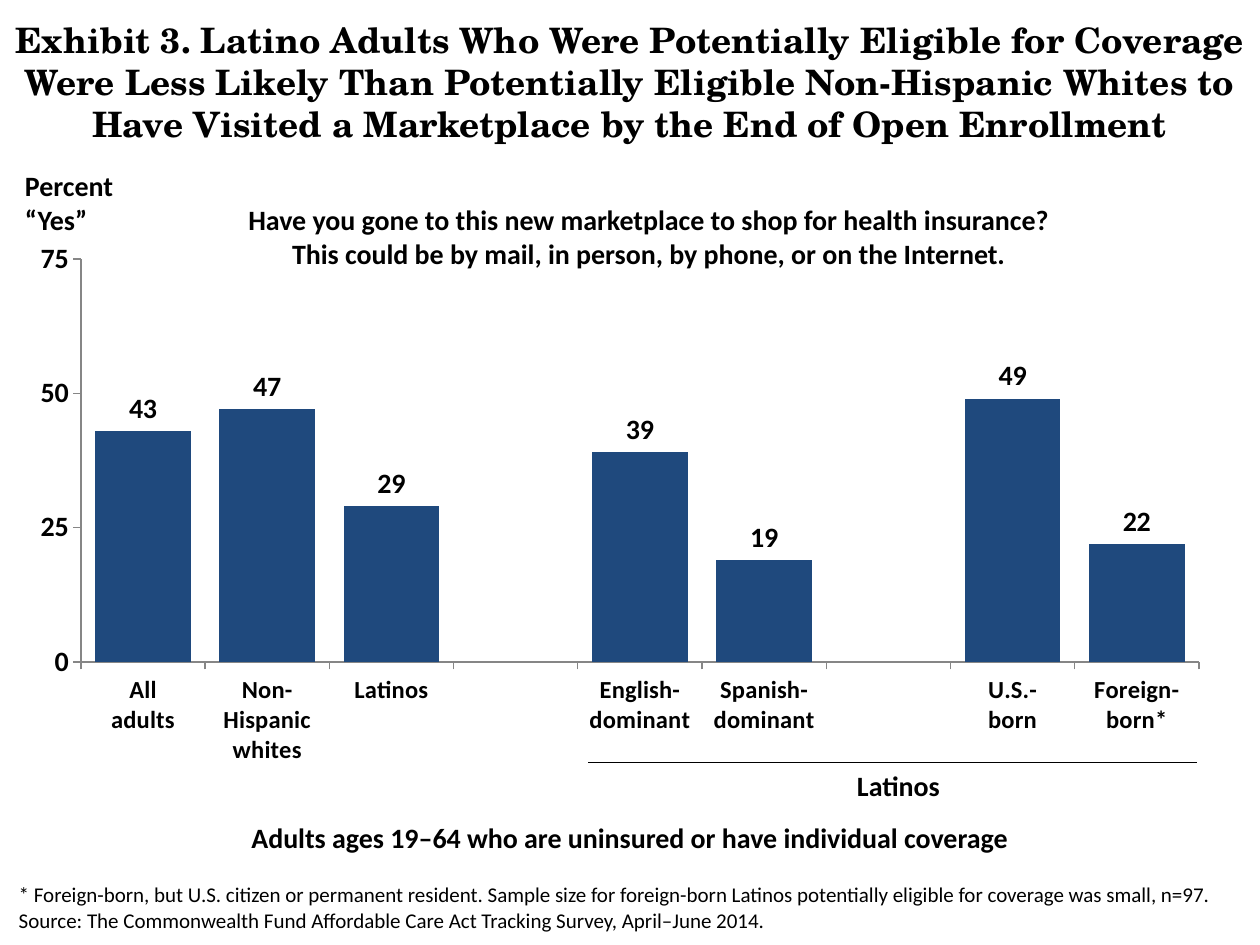
import pptx
import pptx.chart.data
import pptx.dml.color
import pptx.enum.chart
import pptx.enum.shapes
import pptx.enum.text
import pptx.oxml
import pptx.oxml.ns
import pptx.util
from lxml import etree

BLACK = pptx.dml.color.RGBColor(0x00, 0x00, 0x00)
NAVY = pptx.dml.color.RGBColor(0x1F, 0x49, 0x7D)
GRAY = pptx.dml.color.RGBColor(0x86, 0x86, 0x86)
BODY_FONT = "Calibri"
TITLE_FONT = "TeX Gyre Schola"

# The slide is a grid of 100 columns by 100 rows; boxes are (left, top, width, height).
COLUMN = pptx.util.Inches(10) // 100
ROW = pptx.util.Inches(7.5) // 100

RESPONSES = [
    ("All\nadults", 43),
    ("Non-\nHispanic\nwhites", 47),
    ("Latinos", 29),
    ("", None),
    ("English-\ndominant", 39),
    ("Spanish-\ndominant", 19),
    ("", None),
    ("U.S.-\nborn", 49),
    ("Foreign-\nborn*", 22),
]


def on_grid(box):
    left, top, width, height = box
    return [round(n) for n in (left * COLUMN, top * ROW, width * COLUMN, height * ROW)]


def set_font(font, size, bold=True, name=BODY_FONT):
    formats = {"name": name, "size": pptx.util.Pt(size), "bold": bold}
    for attribute, value in formats.items():
        setattr(font, attribute, value)
    font.color.rgb = BLACK


def add_text(slide, box, lines, size=16, bold=True, name=BODY_FONT,
             align=pptx.enum.text.PP_ALIGN.CENTER,
             anchor=pptx.enum.text.MSO_ANCHOR.TOP):
    frame = slide.shapes.add_textbox(*on_grid(box)).text_frame
    frame.word_wrap = True
    frame.vertical_anchor = anchor
    frame.text = "\n".join(lines)
    for paragraph in frame.paragraphs:
        paragraph.alignment = align
        set_font(paragraph.runs[0].font, size, bold, name)


def set_plot_layout(chart, x, y, w, h):
    """Fix the inner plot area, in shares of the chart."""
    plot_area = chart._chartSpace.chart.plotArea
    for old in plot_area.findall(pptx.oxml.ns.qn("c:layout")):
        plot_area.remove(old)
    layout = etree.Element(pptx.oxml.ns.qn("c:layout"))
    manual = etree.SubElement(layout, pptx.oxml.ns.qn("c:manualLayout"))
    settings = {"layoutTarget": "inner", "xMode": "edge", "yMode": "edge",
                "x": x, "y": y, "w": w, "h": h}
    for tag, value in settings.items():
        etree.SubElement(manual, pptx.oxml.ns.qn(f"c:{tag}")).set("val", str(value))
    plot_area.insert(0, layout)


def style_axis(axis, size):
    axis.has_major_gridlines = False
    axis.major_tick_mark = pptx.enum.chart.XL_TICK_MARK.OUTSIDE
    axis.minor_tick_mark = pptx.enum.chart.XL_TICK_MARK.NONE
    axis.format.line.color.rgb = GRAY
    axis.format.line.width = pptx.util.Pt(0.75)
    set_font(axis.tick_labels.font, size)


def add_visits_chart(slide, box):
    visits = pptx.chart.data.CategoryChartData(number_format="0")
    visits.categories = [group for group, _ in RESPONSES]
    visits.add_series("Series 1", [percent for _, percent in RESPONSES])
    chart = slide.shapes.add_chart(
        pptx.enum.chart.XL_CHART_TYPE.COLUMN_CLUSTERED, *on_grid(box), visits).chart
    chart.has_legend = False
    chart.has_title = False
    set_font(chart.font, 16)
    set_plot_layout(chart, 0.05, 0.03, 0.94, 0.74)

    style_axis(chart.category_axis, 14)
    style_axis(chart.value_axis, 16)
    scale = {"minimum_scale": 0, "maximum_scale": 75, "major_unit": 25}
    for attribute, value in scale.items():
        setattr(chart.value_axis, attribute, value)

    plot = chart.plots[0]
    plot.gap_width = 30
    plot.vary_by_categories = False
    bars = plot.series[0].format
    bars.fill.solid()
    bars.fill.fore_color.rgb = NAVY
    plot.has_data_labels = True
    labels = plot.data_labels
    labels.show_value = True
    labels.position = pptx.enum.chart.XL_LABEL_POSITION.OUTSIDE_END
    set_font(labels.font, 16)


def add_group_label(slide, box, label):
    """Rule along the top of the box, with the group's name under it."""
    left, top, width, _ = on_grid(box)
    rule = slide.shapes.add_connector(
        pptx.enum.shapes.MSO_CONNECTOR.STRAIGHT, left, top, left + width, top)
    rule.line.color.rgb = BLACK
    rule.line.width = pptx.util.Pt(0.75)
    etree.SubElement(rule._element.spPr, pptx.oxml.ns.qn("a:effectLst"))
    add_text(slide, (box[0], box[1], box[2] + 0.9, box[3]), [label])


def add_footnotes(slide, box):
    add_text(slide, box, [
        "* Foreign-born, but U.S. citizen or permanent resident. Sample size for "
        "foreign-born Latinos potentially eligible for coverage was small, n=97.",
        "Source: The Commonwealth Fund Affordable Care Act Tracking Survey, "
        "April–June 2014.",
    ], size=12, bold=False, align=pptx.enum.text.PP_ALIGN.LEFT)


def build_exhibit(slide):
    middle = pptx.enum.text.MSO_ANCHOR.MIDDLE
    add_text(slide, (0, 1.33, 100, 14.67), [
        "Exhibit 3. Latino Adults Who Were Potentially Eligible for Coverage "
        "Were Less Likely Than Potentially Eligible Non-Hispanic Whites to "
        "Have Visited a Marketplace by the End of Open Enrollment",
    ], size=20, name=TITLE_FONT, anchor=middle)
    add_visits_chart(slide, (1.7, 25.6, 94.4, 57.73))
    add_text(slide, (1, 18.93, 10.7, 4.93), ["Percent “Yes”"],
             align=pptx.enum.text.PP_ALIGN.LEFT, anchor=middle)
    add_text(slide, (6.9, 20.8, 89.2, 8.53), [
        "Have you gone to this new marketplace to shop for health insurance?",
        "This could be by mail, in person, by phone, or on the Internet.",
    ])
    add_group_label(slide, (46.7, 80.67, 48.3, 4.93), "Latinos")
    add_text(slide, (0.5, 86.13, 99, 4.93),
             ["Adults ages 19–64 who are uninsured or have individual coverage"])
    add_footnotes(slide, (0.5, 92.67, 99.2, 6.67))


def main():
    deck = pptx.Presentation()
    deck.slide_width = 100 * COLUMN
    deck.slide_height = 100 * ROW
    build_exhibit(deck.slides.add_slide(deck.slide_layouts[6]))
    deck.save("out.pptx")


if __name__ == "__main__":
    main()
